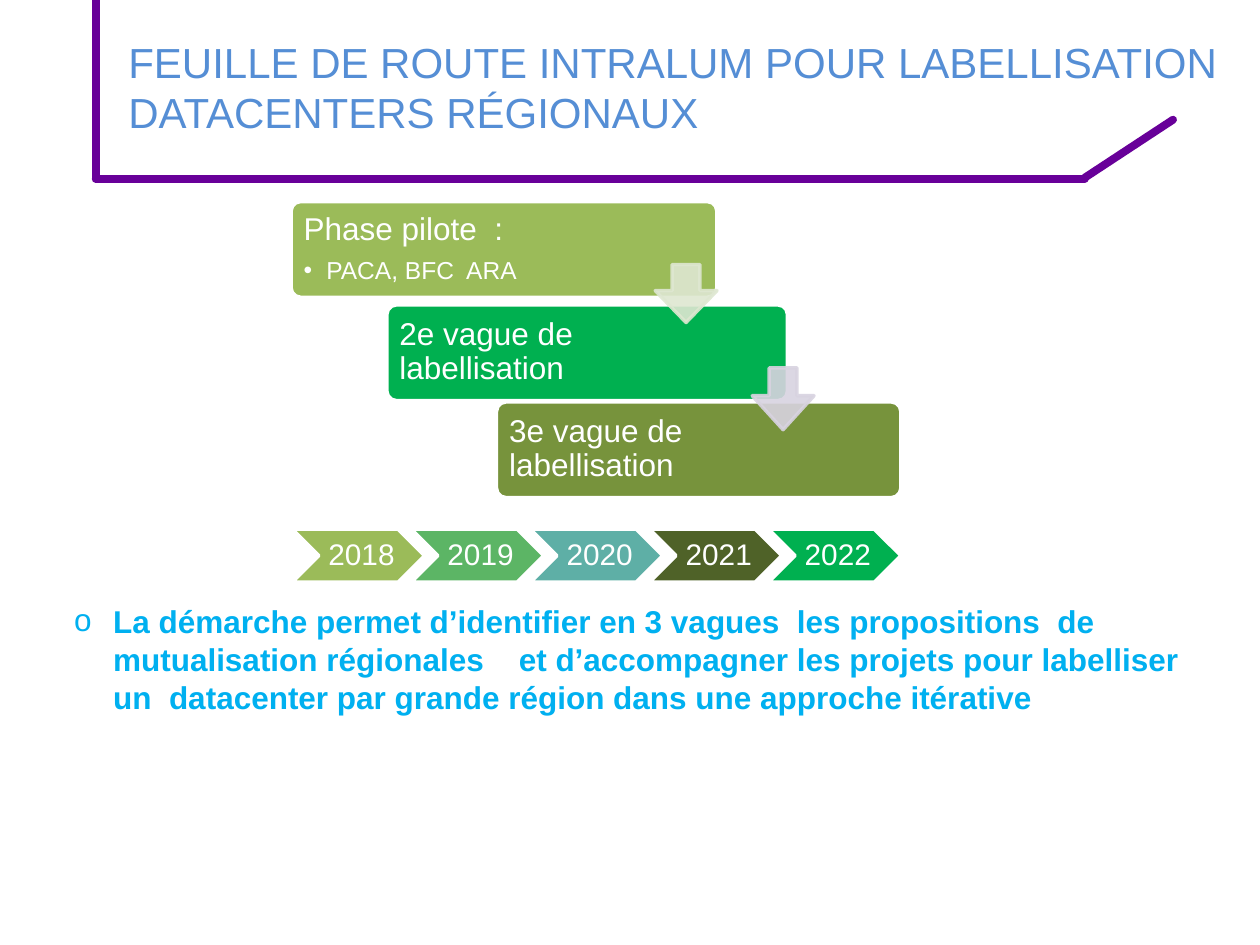
from dataclasses import dataclass
from typing import Any

from lxml import etree
from pptx import Presentation
from pptx import util as u
from pptx.dml.color import RGBColor
from pptx.enum import shapes, text
from pptx.oxml import ns

PURPLE = RGBColor(0x68, 0x00, 0x99)
BLUE = RGBColor(0x55, 0x8E, 0xD5)
CYAN = RGBColor(0x00, 0xB0, 0xF0)
WHITE = RGBColor(0xFF, 0xFF, 0xFF)
LIME = RGBColor(0x9B, 0xBB, 0x59)
GREEN = RGBColor(0x00, 0xB0, 0x50)
OLIVE = RGBColor(0x77, 0x93, 0x3C)
LEAF = RGBColor(0x5C, 0xB5, 0x65)
TEAL = RGBColor(0x5E, 0xAF, 0xA6)
MOSS = RGBColor(0x4F, 0x62, 0x28)
SAGE = RGBColor(0xDE, 0xE7, 0xD1)
LILAC = RGBColor(0xD8, 0xD3, 0xE0)
KIND = shapes.MSO_SHAPE
Box = tuple[float, float, float, float]


@dataclass
class Para:
    words: str
    size: float
    color: RGBColor = WHITE
    bold: bool = False
    mark: str = ""
    indent: float = 0
    after: float = 0
    line: float = 1.0
    align: Any = text.PP_ALIGN.LEFT


@dataclass
class Wave:
    box: Box
    width: float
    fill: RGBColor
    paras: list[Para]


@dataclass
class Arrow:
    box: Box
    fill: RGBColor


@dataclass
class Year:
    label: str
    fill: RGBColor


def put(obj: Any, **values: Any) -> None:
    """Set each named value on the object."""
    for name, value in values.items():
        setattr(obj, name, value)


def sub(node: Any, tag: str, **values: str) -> Any:
    """Add a child element in the drawing namespace."""
    return etree.SubElement(node, ns.qn(tag), values)


def write(slide: Any, box: Box, paras: list[Para], pad: Box, anchor: Any) -> None:
    """Add a text box holding the paragraphs."""
    frame = slide.shapes.add_textbox(*map(u.Inches, box)).text_frame
    left, top, right, base = map(u.Inches, pad)
    put(frame, word_wrap=True, vertical_anchor=anchor, margin_left=left,
        margin_top=top, margin_right=right, margin_bottom=base)
    for i, para in enumerate(paras):
        line = frame.add_paragraph() if i else frame.paragraphs[0]
        if para.mark:
            props = line._p.get_or_add_pPr()
            dent = u.Inches(para.indent)
            props.set("marL", str(dent))
            props.set("indent", str(-dent))
            sub(props, "a:buFont", typeface="Arial")
            sub(props, "a:buChar", char=para.mark)
        put(line, alignment=para.align, line_spacing=para.line,
            space_after=u.Pt(para.after))
        run = line.add_run()
        run.text = para.words
        put(run.font, name="Arial", size=u.Pt(para.size), bold=para.bold)
        run.font.color.rgb = para.color


def draw(slide: Any, kind: Any, box: Box, fill: RGBColor, edge: RGBColor,
         adjust: tuple[float, ...], alpha: int = 100) -> None:
    """Add a filled and outlined preset shape."""
    shape = slide.shapes.add_shape(kind, *map(u.Inches, box))
    shape.shadow.inherit = False
    shape.fill.solid()
    shape.fill.fore_color.rgb = fill
    shape.line.color.rgb = edge
    shape.line.width = u.Pt(2)
    for i, value in enumerate(adjust):
        shape.adjustments[i] = value
    if alpha < 100:
        for color in shape._element.spPr.iter(ns.qn("a:srgbClr")):
            sub(color, "a:alpha", val=str(alpha * 1000))


def rule(slide: Any, ends: Box) -> None:
    """Add one purple line of the title frame."""
    line = slide.shapes.add_connector(
        shapes.MSO_CONNECTOR.STRAIGHT, *map(u.Inches, ends))
    line.line.color.rgb = PURPLE
    line.line.width = u.Pt(4.5)
    line.line._get_or_add_ln().set("cap", "rnd")
    sub(line._element.spPr, "a:effectLst")


def head(words: str) -> Para:
    """Return the main paragraph of a wave."""
    return Para(words, 18, after=6.3, line=0.9)


RULES = [(0.76, 1.42, 8.61, 1.42), (8.61, 1.41, 9.31, 0.95), (0.76, 1.41, 0.76, 0)]
TITLE = Para("FEUILLE DE ROUTE INTRALUM POUR LABELLISATION DATACENTERS RÉGIONAUX",
             24, BLUE)
BODY = Para(
    "La démarche permet d’identifier en 3 vagues  les propositions  de "
    "mutualisation régionales    et d’accompagner les projets pour labelliser "
    "un  datacenter par grande région dans une approche itérative",
    18, CYAN, True, "o", 0.31)
WAVES = [
    Wave((2.31, 1.6, 3.38, 0.76), 2.7, LIME, [
        head("Phase pilote  :"),
        Para("PACA, BFC  ARA", 14, mark="•", indent=0.18, after=2.1, line=0.9)]),
    Wave((3.07, 2.42, 3.18, 0.76), 2.48, GREEN, [head("2e vague de labellisation")]),
    Wave((3.94, 3.19, 3.21, 0.76), 2.5, OLIVE, [head("3e vague de labellisation")]),
]
ARROWS = [Arrow((5.2, 2.1, 0.49, 0.46), SAGE), Arrow((5.97, 2.92, 0.49, 0.49), LILAC)]
YEARS = [Year("2018", LIME), Year("2019", LEAF), Year("2020", TEAL),
         Year("2021", MOSS), Year("2022", GREEN)]


def main() -> None:
    """Build and save the slide."""
    deck = Presentation()
    put(deck, slide_width=u.Inches(10), slide_height=u.Inches(7.5))
    slide = deck.slides.add_slide(deck.slide_layouts[6])
    top, middle = text.MSO_ANCHOR.TOP, text.MSO_ANCHOR.MIDDLE
    pad = (0.1, 0.05, 0.1, 0.05)
    for ends in RULES:
        rule(slide, ends)
    write(slide, (0.92, 0.24, 8.98, 0.91), [TITLE], pad, top)
    write(slide, (0.49, 4.73, 9.06, 1.31), [BODY], pad, top)
    for wave in WAVES:
        left, y, _, _ = wave.box
        draw(slide, KIND.ROUNDED_RECTANGLE, wave.box, wave.fill, WHITE, (0.1,))
        write(slide, (left + 0.03, y + 0.02, wave.width, 0.71), wave.paras,
              (0.07, 0.07, 0.07, 0.07), middle)
    for arrow in ARROWS:
        draw(slide, KIND.DOWN_ARROW, arrow.box, arrow.fill, arrow.fill,
             (0.45, 0.55), 90)
    for i, year in enumerate(YEARS):
        left = 2.32 + i * 0.945
        draw(slide, KIND.CHEVRON, (left, 4.2, 1.05, 0.42), year.fill, WHITE, (0.5,))
        label = Para(year.label, 17, after=5.95, line=0.9, align=text.PP_ALIGN.CENTER)
        write(slide, (left + 0.21, 4.2, 0.63, 0.42), [label],
              (0.07, 0.02, 0.02, 0.02), middle)
    deck.save("out.pptx")


if __name__ == "__main__":
    main()
